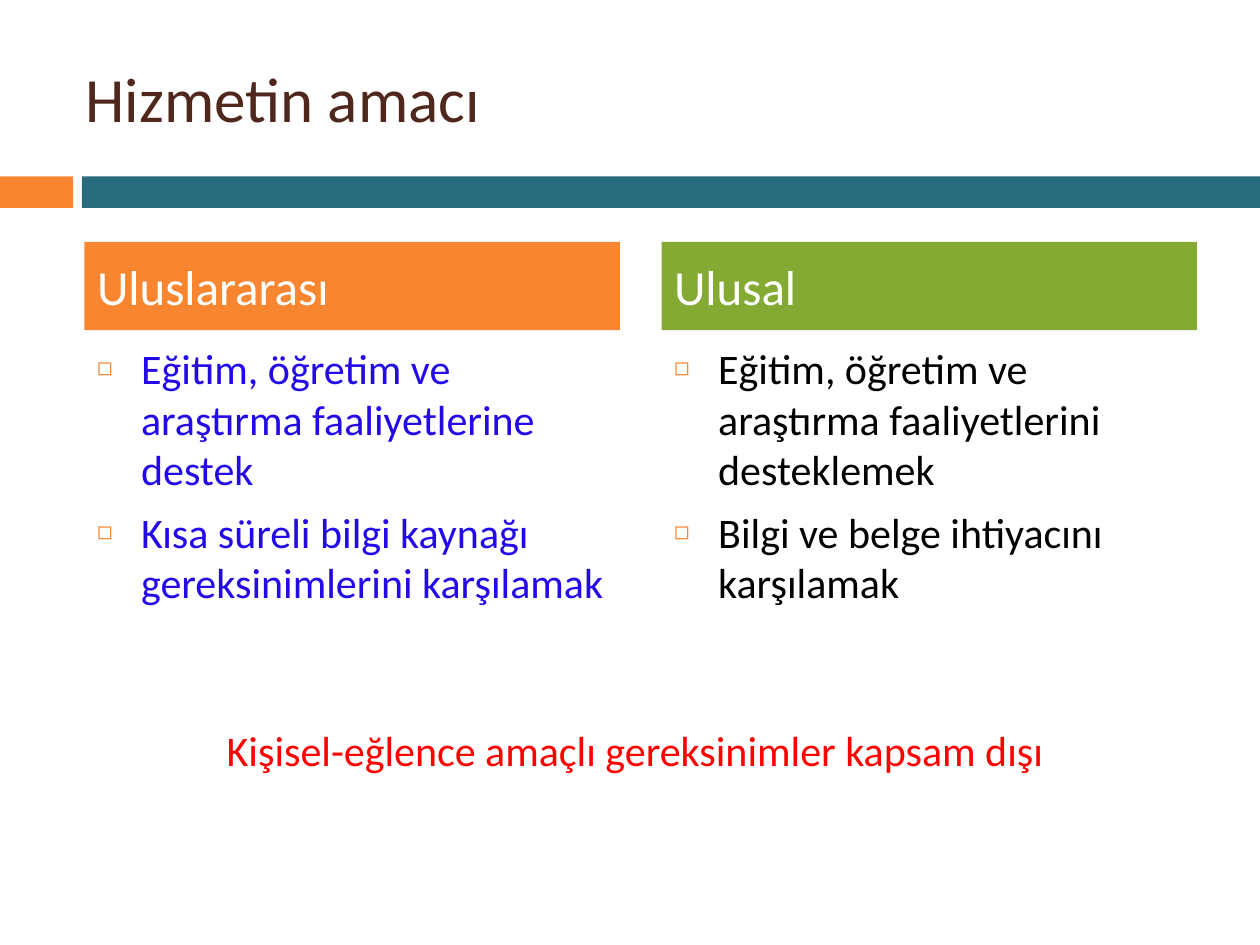
import dataclasses
import pptx
import pptx.dml.color
import pptx.enum.shapes
import pptx.enum.text
import pptx.oxml.ns
import pptx.util
from lxml import etree

Inches = pptx.util.Inches
ALIGN = pptx.enum.text.PP_ALIGN
ANCHOR = pptx.enum.text.MSO_ANCHOR
FIT = pptx.enum.text.MSO_AUTO_SIZE


@dataclasses.dataclass(frozen=True)
class Theme:
    font: str = "Calibri"
    brown: str = "4F271C"
    orange: str = "F88630"
    teal: str = "296C7D"
    green: str = "84AA33"
    blue: str = "2309E7"
    black: str = "000000"
    white: str = "FFFFFF"
    red: str = "FF0000"
    title: int = 36
    head: int = 28
    body: int = 24
    gap: int = 7


THEME = Theme()


def rgb(code):
    return pptx.dml.color.RGBColor.from_string(code)


def paint(shape, color):
    shape.fill.solid()
    shape.fill.fore_color.rgb = rgb(color)


def place(shape, box):
    shape.left, shape.top, shape.width, shape.height = map(Inches, box)


def add_mark(para):
    """Give a paragraph a hanging square bullet."""
    props = para._p.get_or_add_pPr()
    props.set("marL", str(Inches(0.35)))
    props.set("indent", str(-Inches(0.35)))

    def add(parent, tag, **attrs):
        return etree.SubElement(parent, pptx.oxml.ns.qn(tag), **attrs)

    add(add(props, "a:buClr"), "a:srgbClr", val=THEME.orange)
    add(props, "a:buSzPct", val="60000")
    add(props, "a:buChar", char="◻")


def write(shape, *lines, size, color, align=ALIGN.LEFT, anchor=ANCHOR.TOP,
          before=0, marks=False, fit=FIT.NONE):
    frame = shape.text_frame
    frame.word_wrap = True
    frame.auto_size = fit
    frame.vertical_anchor = anchor
    frame.text = "\n".join(lines)
    for para in frame.paragraphs:
        para.alignment = align
        para.space_before = pptx.util.Pt(before)
        if marks:
            add_mark(para)
        font = para.runs[0].font
        font.name, font.size = THEME.font, pptx.util.Pt(size)
        font.bold, font.color.rgb = False, rgb(color)


def add_band(slide, box):
    """Short orange bar and long teal bar, split by a small gap."""
    left, top, width, height = box
    short, gap = 0.58, 0.07
    start = short + gap
    for x, w, color in ((left, short, THEME.orange),
                        (left + start, width - start, THEME.teal)):
        bar = slide.shapes.add_shape(
            pptx.enum.shapes.MSO_SHAPE.RECTANGLE,
            *map(Inches, (x, top, w, height)))
        bar.shadow.inherit = False
        paint(bar, color)
        bar.line.fill.background()


def add_title(slide, box, text):
    title = slide.shapes.title
    place(title, box)
    write(title, text, size=THEME.title, color=THEME.brown,
          anchor=ANCHOR.MIDDLE)


def add_column(head, body, box, name, items, fill, ink):
    """Coloured heading with a bullet list below it."""
    left, top, width, height = box
    tall, drop = 0.7, 0.75
    place(head, (left, top, width, tall))
    paint(head, fill)
    write(head, name, size=THEME.head, color=THEME.white,
          anchor=ANCHOR.MIDDLE, before=THEME.gap)
    place(body, (left, top + drop, width, height - drop))
    write(body, *items, size=THEME.body, color=ink, before=THEME.gap,
          marks=True)


def add_note(slide, box, text):
    note = slide.shapes.add_textbox(*map(Inches, box))
    write(note, text, size=THEME.body, color=THEME.red, align=ALIGN.CENTER,
          fit=FIT.SHAPE_TO_FIT_TEXT)


def main():
    deck = pptx.Presentation()
    deck.slide_width, deck.slide_height = Inches(10), Inches(7.5)
    slide = deck.slides.add_slide(
        deck.slide_layouts.get_by_name("Comparison"))

    # Title and band
    add_band(slide, (0, 1.4, 10, 0.25))
    add_title(slide, (0.58, 0.3, 8.92, 0.95), "Hizmetin amacı")

    # Two compared columns
    columns = (
        ("Uluslararası",
         ("Eğitim, öğretim ve araştırma faaliyetlerine destek",
          "Kısa süreli bilgi kaynağı gereksinimlerini karşılamak"),
         THEME.orange, THEME.blue, 3.4),
        ("Ulusal",
         ("Eğitim, öğretim ve araştırma faaliyetlerini desteklemek",
          "Bilgi ve belge ihtiyacını karşılamak"),
         THEME.green, THEME.black, 3.32),
    )
    holders = {h.placeholder_format.idx: h for h in slide.placeholders}
    for i, (name, items, fill, ink, height) in enumerate(columns):
        add_column(holders[2 * i + 1], holders[2 * i + 2],
                   (0.67 + 4.58 * i, 1.92, 4.25, height),
                   name, items, fill, ink)

    # Closing remark
    add_note(slide, (0.78, 5.7, 8.52, 0.51),
             "Kişisel-eğlence amaçlı gereksinimler kapsam dışı")
    deck.save("out.pptx")


if __name__ == "__main__":
    main()
